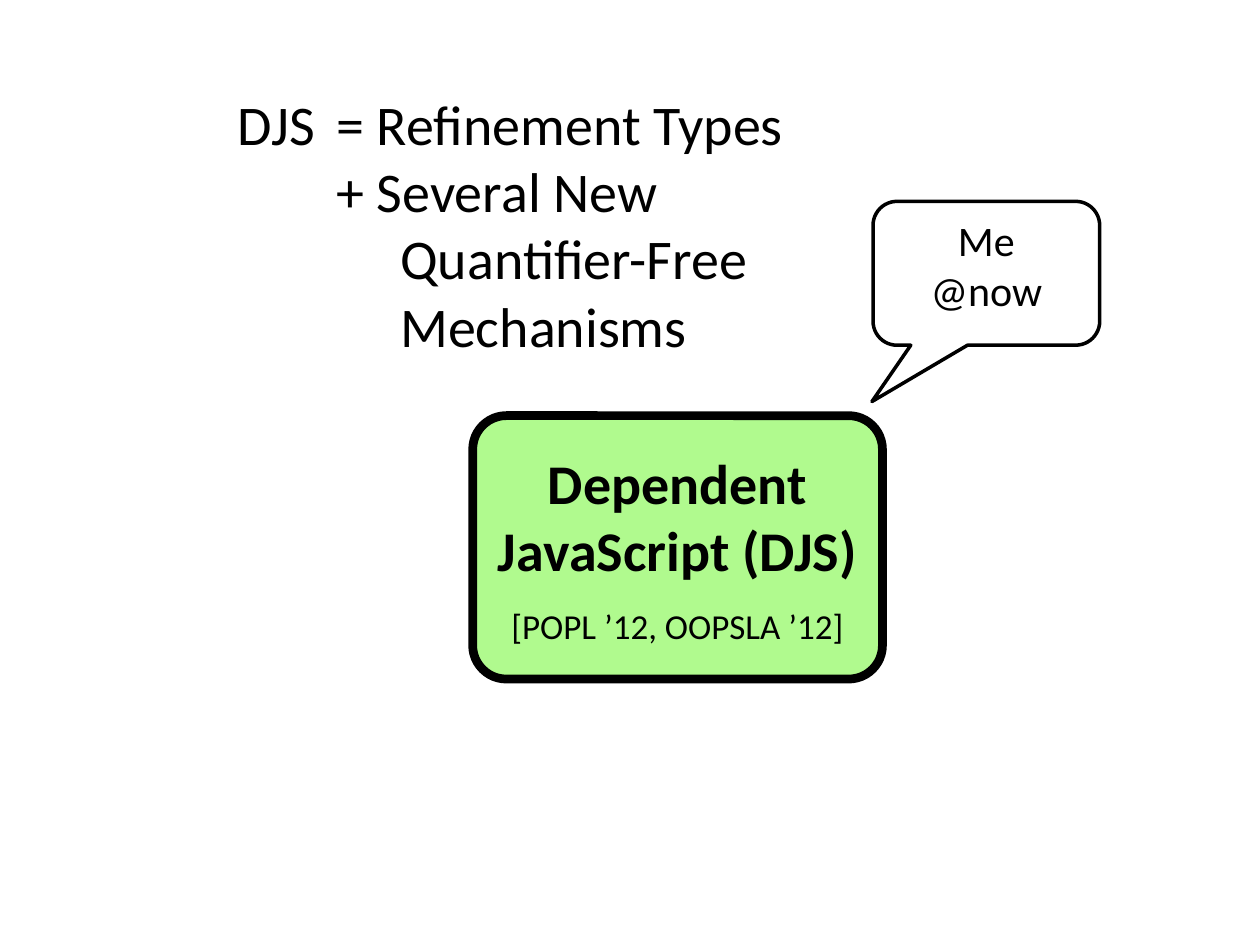
from pptx import Presentation
from pptx.dml.color import RGBColor
from pptx.enum.shapes import MSO_SHAPE
from pptx.enum.text import MSO_ANCHOR, PP_ALIGN
from pptx.util import Cm, Pt

ROUND = MSO_SHAPE.ROUNDED_RECTANGLE
CALLOUT = MSO_SHAPE.ROUNDED_RECTANGULAR_CALLOUT
TOP, MIDDLE = MSO_ANCHOR.TOP, MSO_ANCHOR.MIDDLE
LEFT, CENTER, RIGHT = PP_ALIGN.LEFT, PP_ALIGN.CENTER, PP_ALIGN.RIGHT


def paint(color, code):
    color.rgb = RGBColor.from_string(code)


def write(shape, rows, align, anchor=TOP):
    frame = shape.text_frame
    frame.word_wrap = True
    frame.vertical_anchor = anchor
    for i, (text, size, bold, after, indent) in enumerate(rows):
        para = frame.paragraphs[0] if i == 0 else frame.add_paragraph()
        para.text = text
        para.alignment = align
        para.space_after = Pt(after)
        para.font.name = "Calibri"
        para.font.size = Pt(size)
        para.font.bold = bold
        paint(para.font.color, "000000")
        if indent:
            para._p.get_or_add_pPr().set("marL", str(Cm(indent)))


deck = Presentation()
deck.slide_width, deck.slide_height = Cm(25.4), Cm(19.05)
slide = deck.slides.add_slide(deck.slide_layouts[6])
shapes = slide.shapes

bubble = shapes.add_shape(CALLOUT, Cm(17.6), Cm(4.06), Cm(4.57), Cm(2.9))
for i, value in enumerate([-0.505, 0.892, 0.167]):
    bubble.adjustments[i] = value
bubble.fill.background()
write(bubble, [("Me\v@now", 24, False, 0, 0)], CENTER)

box = shapes.add_shape(ROUND, Cm(9.53), Cm(8.38), Cm(8.26), Cm(5.31))
box.adjustments[0] = 0.128
box.fill.solid()
paint(box.fill.fore_color, "B0FA8E")
write(box, [
    ("Dependent JavaScript (DJS)", 32, True, 12, 0),
    ("[POPL ’12, OOPSLA ’12]", 20, False, 0, 0),
], CENTER, MIDDLE)

for shape, width in [(bubble, 2), (box, 5)]:
    shape.shadow.inherit = False
    shape.line.width = Pt(width)
    paint(shape.line.color, "000000")

terms = shapes.add_textbox(Cm(6.53), Cm(1.68), Cm(10.11), Cm(5.84))
write(terms, [
    ("= Refinement Types", 32, False, 0, 0),
    ("+ Several New", 32, False, 0, 0),
    ("Quantifier-Free", 32, False, 0, 1.29),
    ("Mechanisms", 32, False, 0, 1.29),
], LEFT)

name = shapes.add_textbox(Cm(4.14), Cm(1.68), Cm(2.46), Cm(1.63))
write(name, [("DJS", 32, False, 0, 0)], RIGHT)

deck.save("out.pptx")
